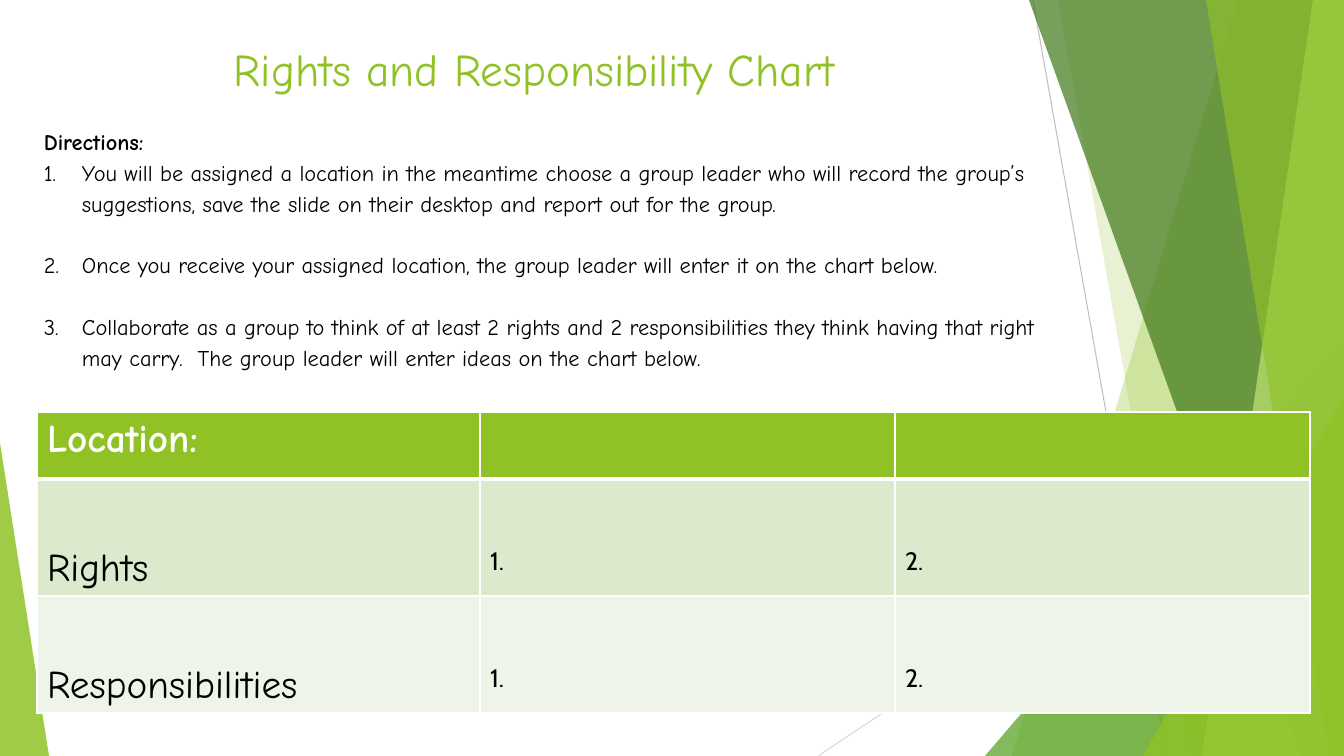
from lxml.etree import SubElement
from pptx import Presentation
from pptx.dml.color import RGBColor
from pptx.enum.shapes import MSO_CONNECTOR as Connector, MSO_SHAPE as Shape
from pptx.enum.text import MSO_ANCHOR as Anchor, PP_ALIGN as Align
from pptx.oxml import parse_xml
from pptx.oxml.ns import nsdecls, qn
from pptx.util import Pt

EMU_PER_PX = 914400 / 100.8
WIDTH, HEIGHT = 1344, 756
GREEN, WHITE, BLACK = "90C226", "FFFFFF", "000000"
HAND, SANS = "Comic Neue", "Cabin"

# Facets: top-left x, bottom-left x, colour, opacity in percent
BACK_FACETS = [(1238, 1012, GREEN, 30), (1058, 1192, GREEN, 20)]
FRONT_FACETS = [(1029, 1301, "3F7819", 70), (1313, 1202, "C0E474", 70),
                (1206, 1329, GREEN, 65)]

DIRECTIONS = [
    "You will be assigned a location in the meantime choose a group leader who will "
    "record the group’s suggestions, save the slide on their desktop and report out "
    "for the group.",
    "Once you receive your assigned location, the group leader will enter it on the "
    "chart below.",
    "Collaborate as a group to think of at least 2 rights and 2 responsibilities they "
    "think having that right may carry.  The group leader will enter ideas on the "
    "chart below.",
]
ROWS = [  # texts, height, fill
    (["Location:", "", ""], 67, GREEN),
    (["Rights", "1.", "2."], 117, "DBE9CD"),
    (["Responsibilities", "1.", "2."], 117, "EEF4E8"),
]
COLUMNS = [443, 415, 415]


def px(value):
    return round(value * EMU_PER_PX)


def color(value):
    return RGBColor.from_string(value)


def apply(target, values):
    for name, value in values.items():
        setattr(target, name, value)


def paint(shape, fill, opacity):
    shape.shadow.inherit = False
    shape.line.fill.background()
    shape.fill.solid()
    shape.fill.fore_color.rgb = color(fill)
    tint = shape.fill._xPr.find(".//" + qn("a:srgbClr"))
    SubElement(tint, qn("a:alpha"), val=str(opacity * 1000))


def add_line(page, start, end, stroke):
    line = page.shapes.add_connector(Connector.STRAIGHT, *map(px, start + end))
    line.line.color.rgb = color(stroke)
    line.line.width = Pt(0.75)
    SubElement(line._element.spPr, qn("a:effectLst"))


def add_facet(page, top_x, bottom_x, fill, opacity):
    outline = page.shapes.build_freeform(px(top_x), 0)
    corners = [(WIDTH, 0), (WIDTH, HEIGHT), (bottom_x, HEIGHT)]
    outline.add_line_segments([(px(x), px(y)) for x, y in corners])
    paint(outline.convert_to_shape(), fill, opacity)


def add_triangle(page, left, top, width, apex, fill, opacity):
    triangle = page.shapes.add_shape(Shape.ISOSCELES_TRIANGLE, px(left), px(top),
                                     px(width), px(HEIGHT - top))
    triangle.adjustments[0] = apex
    paint(triangle, fill, opacity)


def add_span(para, text, size, font=HAND, ink=BLACK, bold=False):
    span = para.add_run()
    span.text = text
    apply(span.font, {"size": Pt(size), "name": font, "bold": bold})
    span.font.color.rgb = color(ink)


def add_box(page, left, top, width, height, anchor=Anchor.TOP):
    box = page.shapes.add_textbox(*map(px, (left, top, width, height)))
    apply(box.text_frame, {"word_wrap": True, "vertical_anchor": anchor})
    return box.text_frame


def number(para):
    props = para._p.get_or_add_pPr()
    props.set("marL", str(px(38)))
    props.set("indent", str(-px(38)))
    SubElement(props, qn("a:buFont"), typeface=HAND)
    SubElement(props, qn("a:buAutoNum"), type="arabicPeriod")


def add_borders(cell, bottom):
    props = cell._tc.get_or_add_tcPr()
    for place, (side, points) in enumerate(zip("LRTB", (1, 1, 1, bottom))):
        props.insert(place, parse_xml(
            f'<a:ln{side} {nsdecls("a")} w="{Pt(points)}"><a:solidFill>'
            f'<a:srgbClr val="{WHITE}"/></a:solidFill></a:ln{side}>'))


def add_backdrop(page):
    add_line(page, (1033, 0), (1167, HEIGHT), "BFBFBF")
    add_line(page, (WIDTH, 406), (818, HEIGHT), "D9D9D9")
    for facet in BACK_FACETS:
        add_facet(page, *facet)
    add_triangle(page, 985, 336, 359, 1, "54A021", 72)
    for facet in FRONT_FACETS:
        add_facet(page, *facet)
    add_triangle(page, 1143, 396, 201, 1, GREEN, 80)
    add_triangle(page, 0, 443, 49, 0, GREEN, 85)


def add_directions(page):
    frame = add_box(page, 34, 119, 1048, 293)
    heading = frame.paragraphs[0]
    heading.line_spacing = 1.15
    add_span(heading, "Directions:", 16, bold=True)
    for index, text in enumerate(DIRECTIONS):
        para = frame.add_paragraph()
        apply(para, {"line_spacing": 1.15, "space_before": Pt(22 if index else 0)})
        number(para)
        add_span(para, text, 16)


def add_chart_table(page):
    heights = [height for _, height, _ in ROWS]
    table = page.shapes.add_table(len(ROWS), len(COLUMNS), px(37), px(412),
                                  px(sum(COLUMNS)), px(sum(heights))).table
    for column, width in zip(table.columns, COLUMNS):
        column.width = px(width)
    for r, (texts, height, fill) in enumerate(ROWS):
        table.rows[r].height = px(height)
        header = r == 0
        for c, text in enumerate(texts):
            cell = table.cell(r, c)
            cell.fill.solid()
            cell.fill.fore_color.rgb = color(fill)
            add_borders(cell, 3 if header else 1)
            apply(cell, {"vertical_anchor": Anchor.TOP if header else Anchor.BOTTOM,
                         "margin_bottom": px(19 if c else 5)})
            if text:
                size, font = (18, SANS) if c else (28, HAND)
                add_span(cell.text_frame.paragraphs[0], text, size, font,
                         WHITE if header else BLACK, header)


def main():
    deck = Presentation()
    apply(deck, {"slide_width": px(WIDTH), "slide_height": px(HEIGHT)})
    page = deck.slides.add_slide(deck.slide_layouts[6])
    add_backdrop(page)
    add_directions(page)
    # Title
    title = add_box(page, 60, 33, 948, 71, Anchor.MIDDLE).paragraphs[0]
    title.alignment = Align.CENTER
    add_span(title, "Rights and Responsibility Chart", 32.4, ink=GREEN)
    add_chart_table(page)
    deck.save("out.pptx")


if __name__ == "__main__":
    main()
